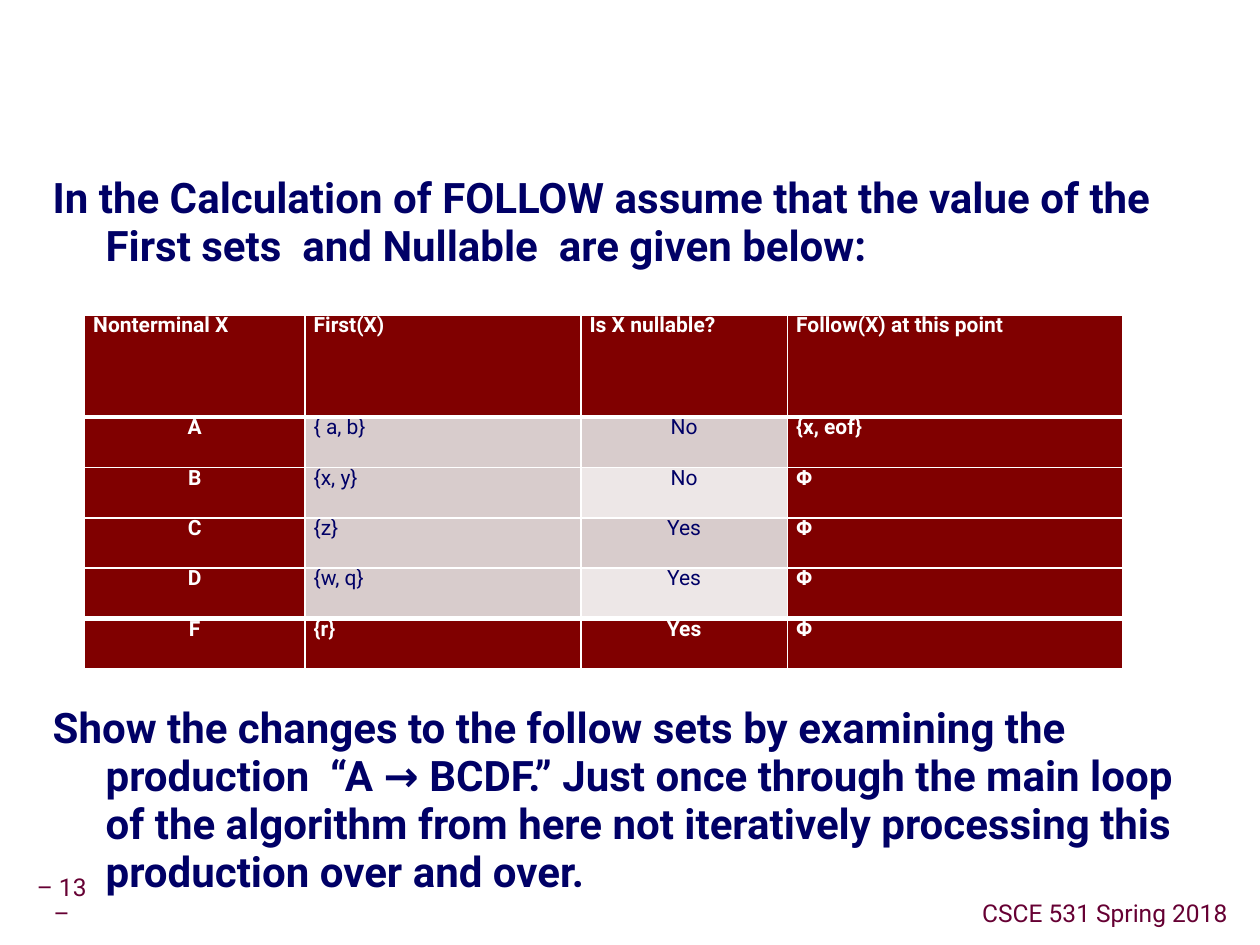
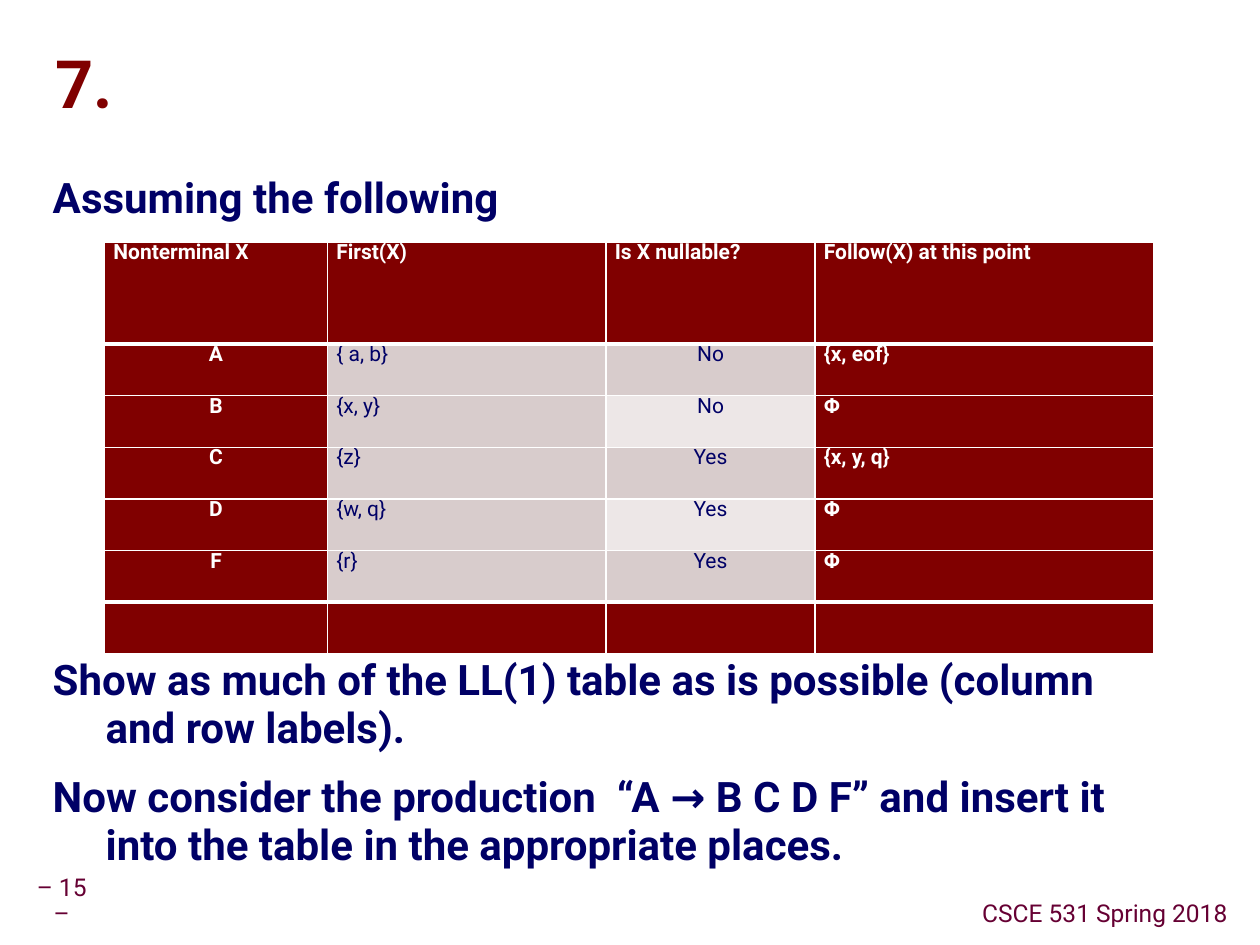
from pptx import Presentation
from pptx.dml.color import RGBColor
from pptx.enum.text import MSO_ANCHOR as ANCHOR, PP_ALIGN as ALIGN
from pptx.oxml import parse_xml
from pptx.util import Inches, Pt

FONT = "Roboto"
MAROON = RGBColor(0x80, 0x00, 0x00)
NAVY = RGBColor(0x00, 0x00, 0x66)
PLUM = RGBColor(0x66, 0x00, 0x33)
WHITE = RGBColor(0xFF, 0xFF, 0xFF)
BAND_DARK = RGBColor(0xD8, 0xCC, 0xCC)
BAND_LIGHT = RGBColor(0xED, 0xE7, 0xE7)
NS = 'xmlns:a="http://schemas.openxmlformats.org/drawingml/2006/main"'
SHADOW = (f'<a:effectLst {NS}><a:outerShdw dist="71842" dir="2700000">'
          '<a:srgbClr val="969696"/></a:outerShdw></a:effectLst>')

HEADER = ["Nonterminal X", "First(X)", "Is X nullable?", "Follow(X) at this point"]
NONTERMINALS = [("A", "{ a, b}", "No"), ("B", "{x, y}", "No"), ("C", "{z}", "Yes"),
                ("D", "{w, q}", "Yes"), ("F", "{r}", "Yes")]

SLIDES = [
    {
        "number": 13,
        "title": "",
        "intro": "In the Calculation of FOLLOW assume that the value of the "
                 "First sets  and Nullable  are given below:",
        "follow": ["{x, eof}", "Φ", "Φ", "Φ", "Φ"],
        "empty_rows": 0,
        "table_at": (0.67, 2.5),
        "cols": [1.75, 2.19, 1.64, 2.66],
        "row_height": 0.4,
        "task_top": 5.55,
        "tasks": ["Show the changes to the follow sets by examining the production  "
                  "“A → BCDF.” Just once through the main loop of the algorithm from here "
                  "not iteratively processing this production over and over."],
    },
    {
        "number": 15,
        "title": "7.",
        "intro": "Assuming the following",
        "follow": ["{x, eof}", "Φ", "{x, y, q}", "Φ", "Φ"],
        "empty_rows": 1,
        "table_at": (0.83, 1.92),
        "cols": [1.77, 2.21, 1.66, 2.69],
        "row_height": 0.41,
        "task_top": 5.17,
        "tasks": ["Show as much of the LL(1) table as is possible (column and row labels).",
                  "Now consider the production  “A → B C D F” and insert it into the table "
                  "in the appropriate places."],
    },
]


def style(font, size, color, bold=False):
    font.name = FONT
    font.size = Pt(size)
    font.bold = bold
    font.color.rgb = color


def add_text(s, box, insets, anchor, wrap=True):
    tf = s.shapes.add_textbox(*map(Inches, box)).text_frame
    tf.margin_left, tf.margin_top, tf.margin_right, tf.margin_bottom = map(Inches, insets)
    tf.vertical_anchor = anchor
    tf.word_wrap = wrap
    return tf


prs = Presentation()
prs.slide_width, prs.slide_height = Inches(10), Inches(7.5)

for data in SLIDES:
    s = prs.slides.add_slide(prs.slide_layouts[6])

    number = add_text(s, (0.24, 7, 0.66, 0.31), (0.05, 0.05, 0.21, 0.05), ANCHOR.MIDDLE)
    number.text = f"– {data['number']} –"
    course = add_text(s, (7.7, 7.1, 2.14, 0.31), (0.05,) * 4, ANCHOR.MIDDLE, False)
    course.text = "CSCE 531 Spring 2018"
    for tf in (number, course):
        p = tf.paragraphs[0]
        p.alignment = ALIGN.CENTER
        p.line_spacing = 0.9
        style(p.font, 14, PLUM)

    if data["title"]:
        tf = add_text(s, (0.44, 0.27, 9.53, 0.85), (0,) * 4, ANCHOR.MIDDLE)
        p = tf.paragraphs[0]
        p.line_spacing = 0.87
        r = p.add_run()
        r.text = data["title"]
        style(r.font, 38, MAROON, True)
        rPr = r.font._element
        rPr.insert(1, parse_xml(SHADOW))

    for top, height, texts in ((1.34, 0.9, [data["intro"]]),
                               (data["task_top"], 1.6, data["tasks"])):
        tf = add_text(s, (0.32, top, 9.09, height), (0.1, 0.05, 0.1, 0.05), ANCHOR.TOP)
        for i, text in enumerate(texts):
            p = tf.add_paragraph() if i else tf.paragraphs[0]
            p.text = text
            p.line_spacing = 0.95
            if i:
                p.space_before = Pt(12)
            pPr = p._p.get_or_add_pPr()
            pPr.set("marL", str(Inches(0.42)))
            pPr.set("indent", str(-Inches(0.42)))
            style(p.font, 24, NAVY, True)

    rows = [HEADER]
    rows += [[*known, follow] for known, follow in zip(NONTERMINALS, data["follow"])]
    rows += [[""] * 4] * data["empty_rows"]
    heights = [0.81] + [data["row_height"]] * (len(rows) - 1)
    last = len(rows) - 1
    table = s.shapes.add_table(len(rows), 4, *map(Inches, data["table_at"]),
                               Inches(sum(data["cols"])), Inches(sum(heights))).table
    for column, width in zip(table.columns, data["cols"]):
        column.width = Inches(width)
    for row, height in zip(table.rows, heights):
        row.height = Inches(height)

    for i, row in enumerate(rows):
        for j, text in enumerate(row):
            cell = table.cell(i, j)
            cell.margin_left = cell.margin_right = Inches(0.07)
            cell.margin_top = cell.margin_bottom = 0
            accent = i in (0, last) or j in (0, 3)
            tcPr = cell._tc.get_or_add_tcPr()
            for side in "LRTB":
                thick = (side == "T" and i in (1, last)) or (side == "B" and i in (0, last - 1))
                tcPr.append(parse_xml(
                    f'<a:ln{side} {NS} w="{Pt(3 if thick else 1)}"><a:solidFill>'
                    f'<a:srgbClr val="{WHITE}"/></a:solidFill></a:ln{side}>'))
            cell.fill.solid()
            band = BAND_DARK if j == 1 or i % 2 else BAND_LIGHT
            cell.fill.fore_color.rgb = MAROON if accent else band
            cell.text = text
            p = cell.text_frame.paragraphs[0]
            p.alignment = ALIGN.CENTER if i and j in (0, 2) else ALIGN.LEFT
            p.line_spacing = 0.9
            style(p.font, 12, WHITE if accent else NAVY, accent)

prs.save("out.pptx")
